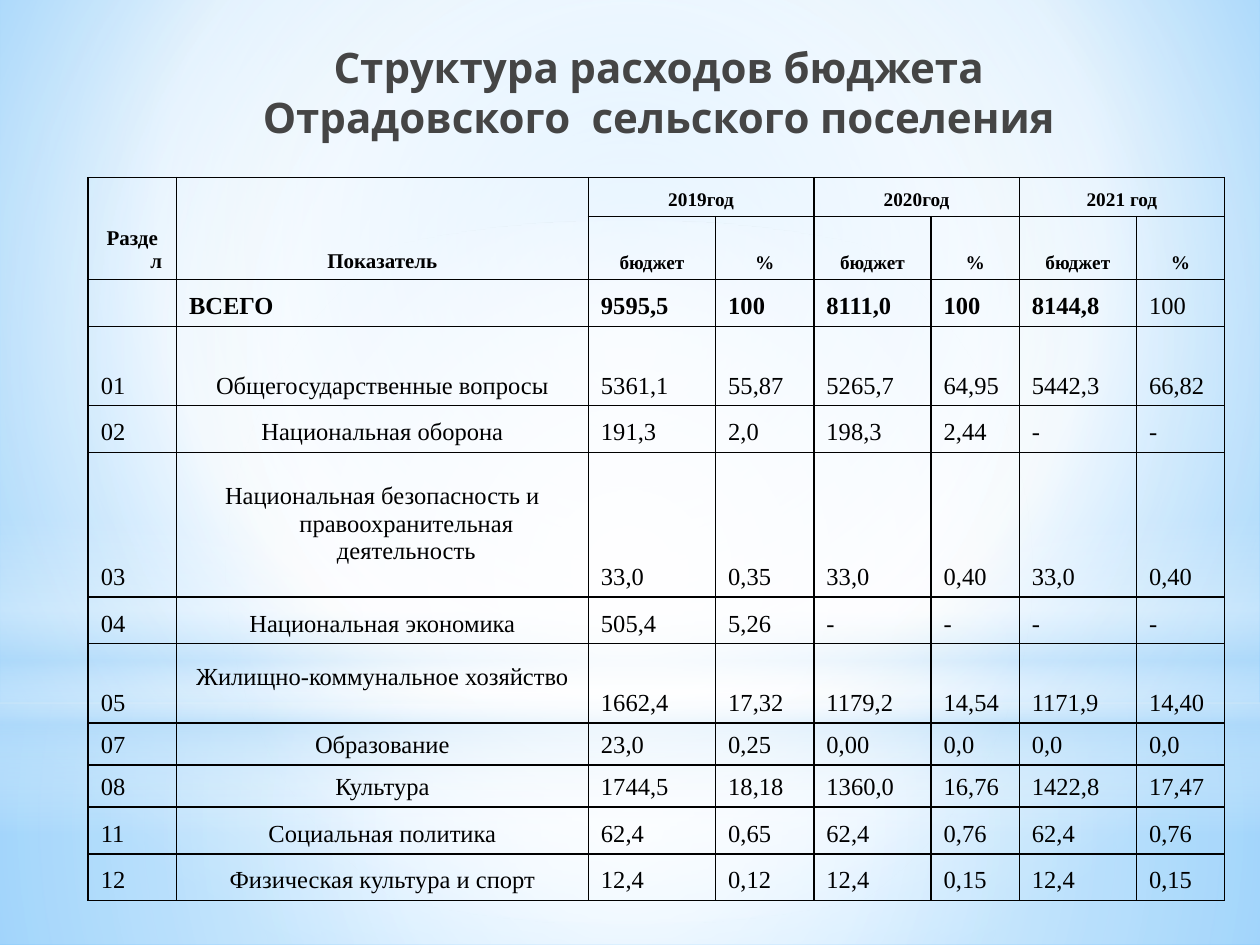
from lxml import etree
from pptx import Presentation
from pptx.dml.color import RGBColor
from pptx.enum.shapes import MSO_SHAPE
from pptx.enum.text import MSO_ANCHOR, PP_ALIGN
from pptx.oxml.ns import qn
from pptx.util import Inches, Pt

RECTANGLE, OVAL = MSO_SHAPE.RECTANGLE, MSO_SHAPE.OVAL
BOTTOM = MSO_ANCHOR.BOTTOM
CENTER, LEFT = PP_ALIGN.CENTER, PP_ALIGN.LEFT

WHITE = RGBColor(0xFF, 0xFF, 0xFF)
BLACK = RGBColor(0, 0, 0)
GRAY = RGBColor(0x45, 0x45, 0x45)
SKY = RGBColor(0x9E, 0xD5, 0xFF)
BLUE = RGBColor(0x5B, 0xB9, 0xFF)
PALE = RGBColor(0xB4, 0xDC, 0xFA)

MIDDLE = (50, 50, 50, 50)
# Haze layers: shape, box, focus (None means vertical), stops (position, colour, opacity)
HAZE = [
    (RECTANGLE, (0, 5.58, 10, 1.92), MIDDLE, [(0, WHITE, 91), (37, WHITE, 76), (100, PALE, 79)]),
    (RECTANGLE, (0, 0, 10, 5.58), MIDDLE, [(0, WHITE, 89), (48, WHITE, 62), (100, PALE, 79)]),
    (RECTANGLE, (0, 4.12, 10, 2.5), None,
     [(0, WHITE, 0), (29, WHITE, 30), (45, PALE, 40), (55, WHITE, 26), (65, PALE, 60), (100, WHITE, 0)]),
    (OVAL, (0, 1.75, 10, 5.58), MIDDLE, [(0, WHITE, 100), (56, WHITE, 0)]),
]

COLUMN_WIDTHS = [0.7, 3.27, 1.01, 0.78, 0.93, 0.7, 0.93, 0.7]
ROW_HEIGHTS = [0.31, 0.5, 0.37, 0.63, 0.37, 1.15, 0.37, 0.63, 0.33, 0.33, 0.37, 0.37]
HEADER_ROWS, TOTAL_ROW = 2, 2
RAISED_ROWS = (5, 7)  # names that stand one line above the figures
BUDGET = [
    ["Раздел", "Показатель", "2019год", "", "2020год", "", "2021 год", ""],
    ["", ""] + ["бюджет", "%"] * 3,
    ["", "ВСЕГО", "9595,5", "100", "8111,0", "100", "8144,8", "100"],
    ["01", "Общегосударственные вопросы", "5361,1", "55,87", "5265,7", "64,95", "5442,3", "66,82"],
    ["02", "Национальная оборона", "191,3", "2,0", "198,3", "2,44", "-", "-"],
    ["03", "Национальная безопасность и правоохранительная деятельность",
     "33,0", "0,35", "33,0", "0,40", "33,0", "0,40"],
    ["04", "Национальная экономика", "505,4", "5,26", "-", "-", "-", "-"],
    ["05", "Жилищно-коммунальное хозяйство", "1662,4", "17,32", "1179,2", "14,54", "1171,9", "14,40"],
    ["07", "Образование", "23,0", "0,25", "0,00", "0,0", "0,0", "0,0"],
    ["08", "Культура", "1744,5", "18,18", "1360,0", "16,76", "1422,8", "17,47"],
    ["11", "Социальная политика", "62,4", "0,65", "62,4", "0,76", "62,4", "0,76"],
    ["12", "Физическая культура и спорт", "12,4", "0,12", "12,4", "0,15", "12,4", "0,15"],
]


def add_color(parent, color, opacity=100):
    node = etree.SubElement(parent, qn("a:srgbClr"), val=str(color))
    if opacity < 100:
        etree.SubElement(node, qn("a:alpha"), val=str(opacity * 1000))


def set_gradient(holder, stops, focus):
    """Replace the solid fill inside holder by a gradient."""
    solid = holder.find(".//" + qn("a:solidFill"))
    gradient = etree.Element(qn("a:gradFill"), rotWithShape="1")
    stop_list = etree.SubElement(gradient, qn("a:gsLst"))
    for position, color, opacity in stops:
        stop = etree.SubElement(stop_list, qn("a:gs"), pos=str(position * 1000))
        add_color(stop, color, opacity)
    if focus:
        circle = etree.SubElement(gradient, qn("a:path"), path="circle")
        sides = {side: str(share * 1000) for side, share in zip("ltrb", focus)}
        etree.SubElement(circle, qn("a:fillToRect"), **sides)
    else:
        etree.SubElement(gradient, qn("a:lin"), ang="5400000", scaled="0")
    solid.getparent().replace(solid, gradient)


def draw_background(page):
    fill = page.background.fill
    fill.solid()
    fill.fore_color.rgb = SKY
    set_gradient(page.element.find(".//" + qn("p:bg")),
                 [(0, SKY, 100), (60, WHITE, 100), (100, BLUE, 100)], (20, 10, 20, 60))
    for kind, box, focus, stops in HAZE:
        layer = page.shapes.add_shape(kind, *map(Inches, box))
        layer.shadow.inherit = False
        layer.line.fill.background()
        layer.fill.solid()
        layer.fill.fore_color.rgb = WHITE
        set_gradient(layer.element.spPr, stops, focus)


def draw_title(page, box):
    frame = page.shapes.add_textbox(*map(Inches, box)).text_frame
    frame.word_wrap = True
    para = frame.paragraphs[0]
    para.text = "Структура расходов бюджета\vОтрадовского  сельского поселения"
    para.alignment = CENTER
    for span in para.runs:
        span.font.name = "Karla"
        span.font.size = Pt(24)
        span.font.bold = True
        span.font.color.rgb = GRAY


def set_borders(cell):
    properties = cell._tc.get_or_add_tcPr()
    for order, side in enumerate("LRTB"):
        line = etree.Element(qn("a:ln" + side), w=str(Pt(1)))
        add_color(etree.SubElement(line, qn("a:solidFill")), BLACK)
        properties.insert(order, line)


def fill_cell(cell, text, size, bold, alignment):
    cell.fill.background()
    set_borders(cell)
    cell.vertical_anchor = BOTTOM
    para = cell.text_frame.paragraphs[0]
    para.text = text
    para.alignment = alignment
    # Hanging indent for wrapped lines
    indents = para._p.get_or_add_pPr()
    indents.set("marL", str(Inches(0.38)))
    indents.set("indent", str(Inches(-0.38)))
    for span in para.runs:
        span.font.name = "Times New Roman"
        span.font.size = Pt(size)
        span.font.bold = bold
        span.font.color.rgb = BLACK
    if not text:
        etree.SubElement(para._p, qn("a:endParaRPr"), sz=str(size * 100))


def draw_budget_table(page, box):
    table = page.shapes.add_table(len(BUDGET), len(COLUMN_WIDTHS), *map(Inches, box)).table
    table.first_row = table.horz_banding = False
    for column, width in zip(table.columns, COLUMN_WIDTHS):
        column.width = Inches(width)
    for row, height in zip(table.rows, ROW_HEIGHTS):
        row.height = Inches(height)

    last = len(COLUMN_WIDTHS) - 1
    for r, values in enumerate(BUDGET):
        for c, text in enumerate(values):
            header = r < HEADER_ROWS
            size = 14 if not header else 12 if c < 2 else 11
            bold = header or (r == TOTAL_ROW and c < last)
            centered = header or (c == 1 and r != TOTAL_ROW)
            fill_cell(table.cell(r, c), text, size, bold, CENTER if centered else LEFT)
    for r in RAISED_ROWS:
        table.cell(r, 1).margin_bottom = Inches(0.26)

    # Header spans: two tall label cells, then one cell per year
    for c in (0, 1):
        table.cell(0, c).merge(table.cell(1, c))
    for c in (2, 4, 6):
        table.cell(0, c).merge(table.cell(0, c + 1))


def main():
    deck = Presentation()
    deck.slide_width, deck.slide_height = Inches(10), Inches(7.5)
    page = deck.slides.add_slide(deck.slide_layouts[6])
    draw_background(page)
    draw_title(page, (0.98, 0.28, 8.5, 1.25))
    draw_budget_table(page, (0.7, 1.41, sum(COLUMN_WIDTHS), sum(ROW_HEIGHTS)))
    deck.save("out.pptx")


if __name__ == "__main__":
    main()
